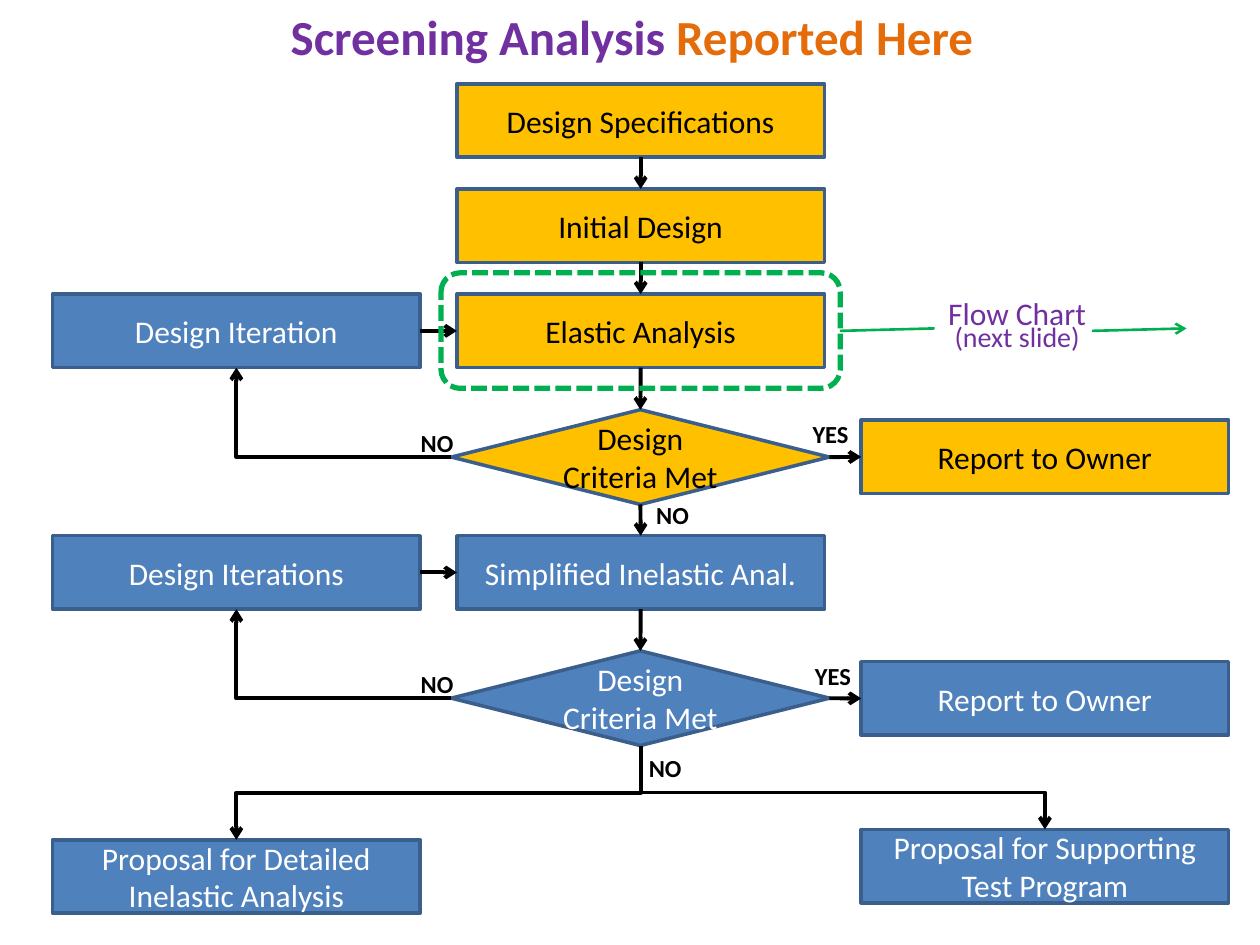
from lxml import etree
from pptx import Presentation
from pptx import util as u
from pptx.dml.color import RGBColor
from pptx.enum import dml, shapes, text
from pptx.oxml.ns import qn

COLORS = {
    "amber": "FFC000", "blue": "4F81BD", "border": "3A5F8C", "black": "000000",
    "white": "FFFFFF", "purple": "7030A0", "orange": "E46C0A", "green": "00B050",
}
FONT = "Calibri"
LEFT, CENTER, RIGHT = (1.06 + 8.15 * column for column in range(3))
BOX_SIZE = (7.41, 1.48)
DECISION_SIZE = (7.62, 1.91)
DECISION_LEFT = 9.1
TOP, SIDE_LEFT, BOTTOM, SIDE_RIGHT = range(4)


def rgb(name):
    return RGBColor.from_string(COLORS[name])


def add_run(paragraph, words, size, color, bold=False):
    run = paragraph.add_run()
    run.text = words
    run.font.name = FONT
    run.font.size = u.Pt(size)
    run.font.bold = bold
    run.font.color.rgb = rgb(color)


def add_step(slide, words, left, top, fill, decision=False):
    kind = shapes.MSO_SHAPE.FLOWCHART_DECISION if decision else shapes.MSO_SHAPE.FLOWCHART_PROCESS
    size = DECISION_SIZE if decision else BOX_SIZE
    step = slide.shapes.add_shape(kind, *map(u.Cm, (left, top, *size)))
    step.shadow.inherit = False
    step.fill.solid()
    step.fill.fore_color.rgb = rgb(fill)
    step.line.color.rgb = rgb("border")
    step.line.width = u.Pt(2)
    frame = step.text_frame
    frame.word_wrap = True
    frame.vertical_anchor = text.MSO_ANCHOR.MIDDLE
    paragraph = frame.paragraphs[0]
    paragraph.alignment = text.PP_ALIGN.CENTER
    add_run(paragraph, words, 18, "black" if fill == "amber" else "white")
    return step


def add_line(slide, ends, color="black", width=2.25, arrow=True, kind=shapes.MSO_CONNECTOR.STRAIGHT):
    line = slide.shapes.add_connector(kind, *map(u.Cm, ends))
    line.line.color.rgb = rgb(color)
    line.line.width = u.Pt(width)
    if arrow:
        etree.SubElement(line.line._get_or_add_ln(), qn("a:tailEnd"), type="arrow")
    etree.SubElement(line._element.spPr, qn("a:effectLst"))
    return line


def add_link(slide, source, source_site, target, target_site):
    link = add_line(slide, (0, 0, 1, 1))
    link.begin_connect(source, source_site)
    link.end_connect(target, target_site)


def add_bent(slide, ends, turn, preset, bend=None):
    """Draw an elbow arrow from its unturned frame, then turn it."""
    bent = add_line(slide, ends, kind=shapes.MSO_CONNECTOR.ELBOW)
    properties = bent._element.spPr
    properties.find(qn("a:xfrm")).set("rot", str(turn * 60000))
    geometry = properties.find(qn("a:prstGeom"))
    geometry.set("prst", preset)
    if bend is not None:
        guides = geometry.get_or_add_avLst()
        etree.SubElement(guides, qn("a:gd"), name="adj1", fmla=f"val {round(bend * 100000)}")


def add_loop_back(slide, decision_middle, iteration_bottom):
    add_bent(slide, (LEFT + BOX_SIZE[0] / 2, iteration_bottom, DECISION_LEFT, decision_middle),
             180, "bentConnector2")


def add_branch(slide, start, end, bend):
    (x1, y1), (x2, y2) = start, end
    middle_x, middle_y = (x1 + x2) / 2, (y1 + y2) / 2
    half_width, half_height = (y2 - y1) / 2, abs(x2 - x1) / 2
    to_left = x2 < x1
    if not to_left:
        half_width = -half_width
    add_bent(slide, (middle_x - half_width, middle_y - half_height,
                     middle_x + half_width, middle_y + half_height),
             90 if to_left else 270, "bentConnector3", bend)


def add_label(slide, place, runs):
    label = slide.shapes.add_textbox(*map(u.Cm, place))
    frame = label.text_frame
    frame.word_wrap = False
    frame.auto_size = text.MSO_AUTO_SIZE.SHAPE_TO_FIT_TEXT
    for run in runs:
        add_run(frame.paragraphs[0], *run, bold=True)


def add_next_slide_note(slide):
    highlight = slide.shapes.add_shape(shapes.MSO_SHAPE.ROUNDED_RECTANGLE,
                                       *map(u.Cm, (8.89, 5.5, 8.05, 2.33)))
    highlight.shadow.inherit = False
    highlight.fill.background()
    highlight.line.color.rgb = rgb("green")
    highlight.line.width = u.Pt(3)
    highlight.line.dash_style = dml.MSO_LINE.SQUARE_DOT
    add_line(slide, (16.93, 6.67, 18.84, 6.62), "green", 1.5, arrow=False)
    note = slide.shapes.add_textbox(*map(u.Cm, (18.84, 6.15, 3.33, 1.14)))
    frame = note.text_frame
    frame.word_wrap = False
    frame.auto_size = text.MSO_AUTO_SIZE.SHAPE_TO_FIT_TEXT
    paragraph = frame.paragraphs[0]
    paragraph.alignment = text.PP_ALIGN.CENTER
    paragraph.line_spacing = u.Pt(12)
    add_run(paragraph, "Flow Chart", 18, "purple")
    paragraph.add_line_break()
    add_run(paragraph, "(next slide)", 16, "purple")
    add_line(slide, (22.01, 6.67, 23.92, 6.62), "green", 1.5)


def main():
    deck = Presentation()
    deck.slide_width, deck.slide_height = u.Cm(25.4), u.Cm(19.05)
    slide = deck.slides.add_slide(deck.slide_layouts[6])

    specifications = add_step(slide, "Design Specifications", CENTER, 1.69, "amber")
    initial = add_step(slide, "Initial Design", CENTER, 3.81, "amber")
    elastic = add_step(slide, "Elastic Analysis", CENTER, 5.93, "amber")
    iteration = add_step(slide, "Design Iteration", LEFT, 5.93, "blue")
    elastic_met = add_step(slide, "Design Criteria Met", DECISION_LEFT, 8.26, "amber", decision=True)
    elastic_report = add_step(slide, "Report to Owner", RIGHT, 8.47, "amber")
    inelastic = add_step(slide, "Simplified Inelastic Anal.", CENTER, 10.8, "blue")
    iterations = add_step(slide, "Design Iterations", LEFT, 10.8, "blue")
    inelastic_met = add_step(slide, "Design Criteria Met", DECISION_LEFT, 13.12, "blue", decision=True)
    inelastic_report = add_step(slide, "Report to Owner", RIGHT, 13.34, "blue")
    add_step(slide, "Proposal for Detailed Inelastic Analysis", LEFT, 16.93, "blue")
    add_step(slide, "Proposal for Supporting Test Program", RIGHT, 16.72, "blue")

    add_loop_back(slide, 14.08, 12.28)
    add_loop_back(slide, 9.21, 7.41)
    half_box = BOX_SIZE[0] / 2
    fork = (CENTER + half_box, 15.03)
    add_branch(slide, fork, (LEFT + half_box, 16.93), 0.5)
    add_branch(slide, fork, (RIGHT + half_box, 16.72), 0.56)

    spine = [specifications, initial, elastic, elastic_met, inelastic, inelastic_met]
    for upper, lower in zip(spine, spine[1:]):
        add_link(slide, upper, BOTTOM, lower, TOP)
    for before, after in [(elastic_met, elastic_report), (iterations, inelastic),
                          (inelastic_met, inelastic_report), (iteration, elastic)]:
        add_link(slide, before, SIDE_RIGHT, after, SIDE_LEFT)

    for answer, left, top in [("YES", 16.13, 8.33), ("NO", 8.23, 8.51), ("NO", 8.23, 13.36),
                              ("YES", 16.18, 13.21), ("NO", 12.83, 15.06), ("NO", 12.98, 9.96)]:
        add_label(slide, (left, top, 1.24 if answer == "YES" else 1.17, 0.86),
                  [(answer, 14, "black")])
    add_label(slide, (5.61, 0, 14.43, 1.45),
              [("Screening Analysis ", 28, "purple"), ("Reported Here", 28, "orange")])
    add_next_slide_note(slide)
    deck.save("out.pptx")


if __name__ == "__main__":
    main()
